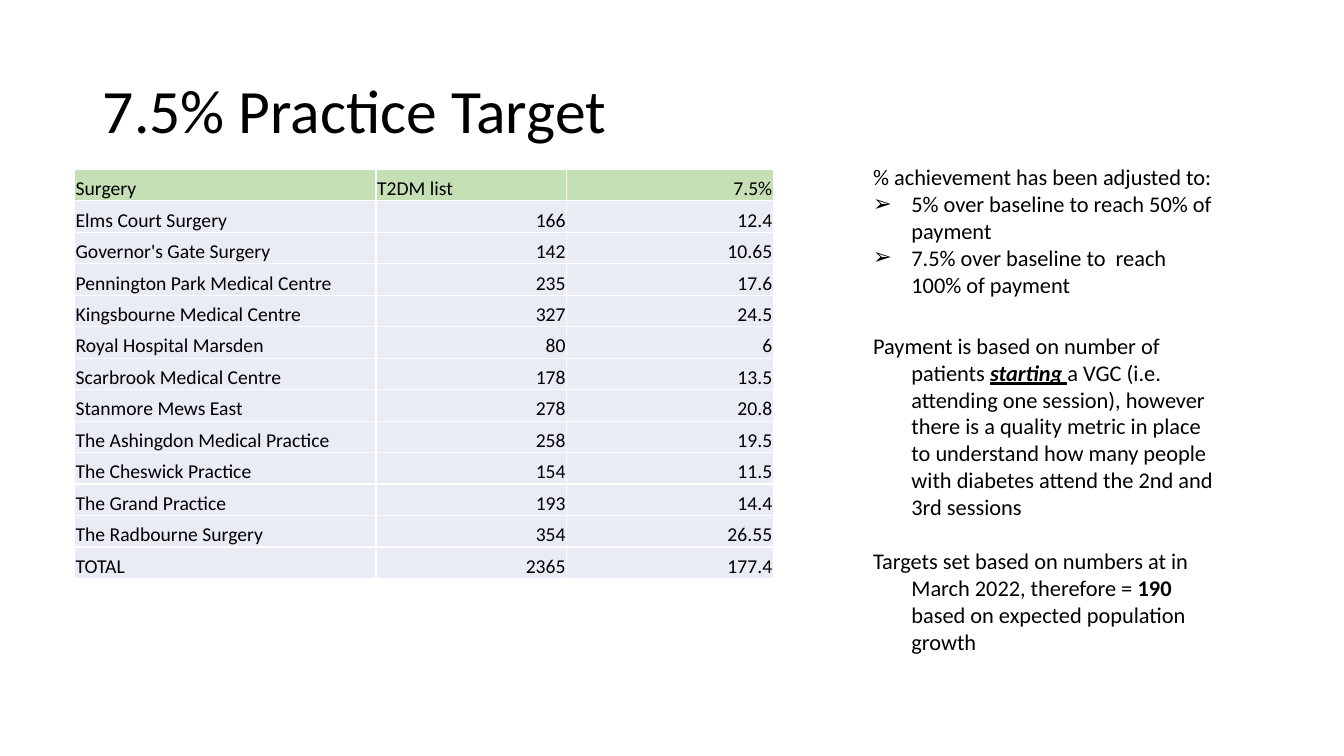
from pptx import Presentation
from pptx.dml.color import RGBColor as RGB
from pptx.enum.text import MSO_ANCHOR as Anchor, MSO_AUTO_SIZE as Fit, PP_ALIGN as Align
from pptx.oxml import parse_xml
from pptx.oxml.ns import nsdecls
from pptx.util import Inches, Pt

FONT = "Calibri"
BLACK, WHITE, GREEN, PALE = "000000", "FFFFFF", "C5E0B4", "E9EBF5"

COLS = [2.99, 1.89, 2.05]
TABLE_HIGH = 4.06
ROWS = [
    ("Surgery", "T2DM list", "7.5%"),
    ("Elms Court Surgery", "166", "12.4"),
    ("Governor's Gate Surgery", "142", "10.65"),
    ("Pennington Park Medical Centre", "235", "17.6"),
    ("Kingsbourne Medical Centre", "327", "24.5"),
    ("Royal Hospital Marsden", "80", "6"),
    ("Scarbrook Medical Centre", "178", "13.5"),
    ("Stanmore Mews East", "278", "20.8"),
    ("The Ashingdon Medical Practice", "258", "19.5"),
    ("The Cheswick Practice", "154", "11.5"),
    ("The Grand Practice", "193", "14.4"),
    ("The Radbourne Surgery", "354", "26.55"),
    ("TOTAL", "2365", "177.4"),
]

# Each note: bullet, space before in points, (text, style) runs
NOTES = [
    (None, 0, [("% achievement has been adjusted to:", "")]),
    ("➢", 0, [("5% over baseline to reach 50% of payment", "")]),
    ("➢", 0, [("7.5% over baseline to  reach 100% of payment", "")]),
    (None, 24.5, [
        ("Payment is based on number of patients ", ""),
        ("starting ", "biu"),
        ("a VGC (i.e. attending one session), however there is a quality "
         "metric in place to understand how many people with diabetes "
         "attend the 2nd and 3rd sessions", ""),
    ]),
    (None, 19.5, [
        ("Targets set based on numbers at in March 2022, therefore = ", ""),
        ("190 ", "b"),
        ("based on expected population growth", ""),
    ]),
]


def color(code):
    return RGB.from_string(code)


def style(run, size, marks=""):
    font = run.font
    font.name, font.size = FONT, Pt(size)
    font.color.rgb = color(BLACK)
    font.bold, font.italic, font.underline = (m in marks for m in "biu")


def place(shape, left, top, width, height):
    shape.left, shape.top = Inches(left), Inches(top)
    shape.width, shape.height = Inches(width), Inches(height)


def add_title(slide, text):
    title = slide.shapes.title
    place(title, 0.92, 0.4, 11.5, 1.45)
    frame = title.text_frame
    frame.text = text
    frame.vertical_anchor = Anchor.MIDDLE
    para = frame.paragraphs[0]
    para.alignment, para.line_spacing = Align.LEFT, 0.9
    style(para.runs[0], 44)


def set_border(cell, code, points):
    props = cell._tc.get_or_add_tcPr()
    for i, side in enumerate("LRTB"):
        props.insert(i, parse_xml(
            f'<a:ln{side} {nsdecls("a")} w="{Pt(points)}"><a:solidFill>'
            f'<a:srgbClr val="{code}"/></a:solidFill></a:ln{side}>'))


def fill_cell(cell, text, fill, align):
    cell.text = text
    cell.vertical_anchor = Anchor.BOTTOM
    cell.margin_left = cell.margin_right = cell.margin_top = Inches(0.01)
    cell.margin_bottom = 0
    cell.fill.solid()
    cell.fill.fore_color.rgb = color(fill)
    set_border(cell, WHITE, 1)
    para = cell.text_frame.paragraphs[0]
    para.alignment = align
    style(para.runs[0], 14)


def add_targets(slide):
    table = slide.shapes.add_table(
        len(ROWS), len(COLS), Inches(0.74), Inches(1.68),
        Inches(sum(COLS)), Inches(TABLE_HIGH)).table
    table.first_row = table.horz_banding = False
    for col, width in zip(table.columns, COLS):
        col.width = Inches(width)
    for r, values in enumerate(ROWS):
        table.rows[r].height = Inches(TABLE_HIGH / len(ROWS))
        for c, text in enumerate(values):
            # Numbers go right, words go left
            align = Align.RIGHT if text[0].isdigit() else Align.LEFT
            fill_cell(table.cell(r, c), text, PALE if r else GREEN, align)


def set_bullet(para, mark):
    props = para._p.get_or_add_pPr()
    props.set("marL", str(Inches(0.38)))
    props.set("indent", str(Inches(-0.38)))
    tag = f'buChar {nsdecls("a")} char="{mark}"' if mark else f'buNone {nsdecls("a")}'
    props.append(parse_xml(f"<a:{tag}/>"))


def add_notes(slide):
    body = slide.placeholders[1]
    place(body, 8.56, 1.57, 3.64, 5.18)
    frame = body.text_frame
    frame.word_wrap, frame.auto_size = True, Fit.SHAPE_TO_FIT_TEXT
    frame.vertical_anchor = Anchor.TOP
    for i, (mark, gap, parts) in enumerate(NOTES):
        para = frame.add_paragraph() if i else frame.paragraphs[0]
        para.alignment, para.line_spacing = Align.LEFT, 1.0
        para.space_before, para.space_after = Pt(gap), Pt(0)
        set_bullet(para, mark)
        for text, marks in parts:
            run = para.add_run()
            run.text = text
            style(run, 16, marks)


def main():
    deck = Presentation()
    deck.slide_width, deck.slide_height = Inches(13.33), Inches(7.5)
    slide = deck.slides.add_slide(deck.slide_layouts[1])
    add_title(slide, "7.5% Practice Target")
    add_targets(slide)
    add_notes(slide)
    deck.save("out.pptx")


if __name__ == "__main__":
    main()
